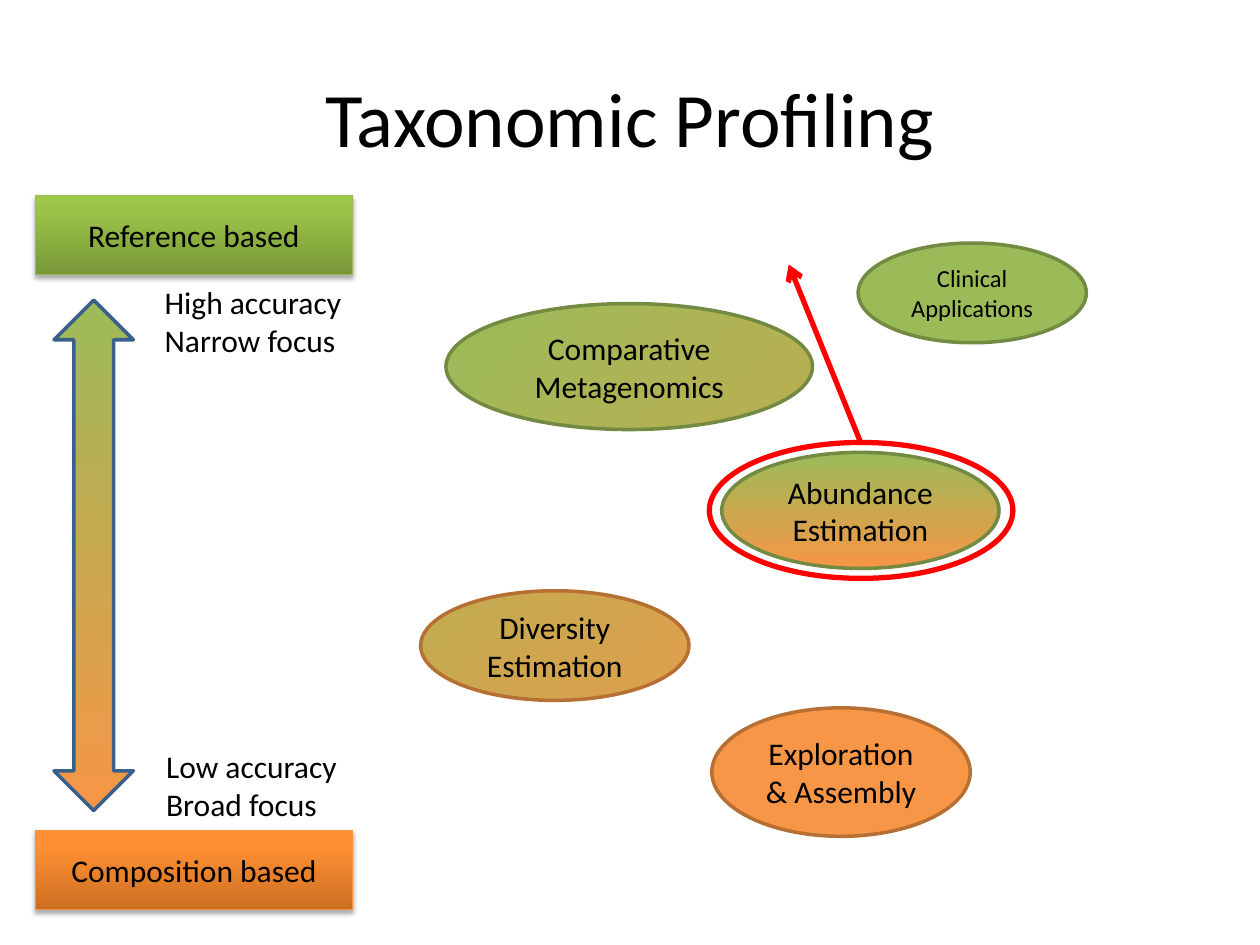
from copy import deepcopy

from lxml.etree import SubElement
from pptx import Presentation
from pptx.dml.color import RGBColor
from pptx.enum.shapes import MSO_CONNECTOR, MSO_SHAPE
from pptx.enum.text import MSO_ANCHOR, PP_ALIGN
from pptx.oxml.ns import qn
from pptx.util import Cm, Pt

FONT = "Calibri"
BLACK, RED = "000000", "FF0000"
GREEN, ORANGE = "9BBB59", "F79646"
GREEN_EDGE, ORANGE_EDGE, BLUE_EDGE = "738A42", "B76F34", "3A5F8C"
TITLE_ONLY = 5


def color(value):
    return RGBColor.from_string(value)


class SlideBuilder:
    """Holds the text style and the slide being filled."""

    def __init__(self, slide):
        self.slide = slide

    def set_text(self, text_frame, text, size, align):
        text_frame.text = text
        for paragraph in text_frame.paragraphs:
            paragraph.alignment = align
            for run in paragraph.runs:
                run.font.name = FONT
                run.font.size = Pt(size)
                run.font.color.rgb = color(BLACK)

    def title(self, text, left, top, width, height):
        title = self.slide.shapes.title
        title.left, title.top = Cm(left), Cm(top)
        title.width, title.height = Cm(width), Cm(height)
        title.text_frame.vertical_anchor = MSO_ANCHOR.MIDDLE
        self.set_text(title.text_frame, text, 44, PP_ALIGN.CENTER)

    def label(self, text, left, top, width, height):
        box = self.slide.shapes.add_textbox(Cm(left), Cm(top), Cm(width), Cm(height))
        box.text_frame.word_wrap = False
        self.set_text(box.text_frame, text, 18, PP_ALIGN.LEFT)

    def shape(self, kind, bounds, edge, weight=2, fill=None, angle=90, text="", size=18):
        """Fill is None, one colour, or a list of (position, colour) stops."""
        shape = self.slide.shapes.add_shape(kind, *map(Cm, bounds))
        shape.shadow.inherit = False
        if fill is None:
            shape.fill.background()
        elif isinstance(fill, str):
            shape.fill.solid()
            shape.fill.fore_color.rgb = color(fill)
        else:
            self.gradient(shape, fill, angle)
        shape.line.color.rgb = color(edge)
        shape.line.width = Pt(weight)
        if text:
            shape.text_frame.vertical_anchor = MSO_ANCHOR.MIDDLE
            self.set_text(shape.text_frame, text, size, PP_ALIGN.CENTER)
        return shape

    def gradient(self, shape, stops, angle):
        """Apply a linear gradient; the angle runs clockwise."""
        shape.fill.gradient()
        shape.fill.gradient_angle = (360 - angle) % 360
        stop_list = shape._element.spPr.find(".//" + qn("a:gsLst"))
        while len(stop_list) < len(stops):
            stop_list.append(deepcopy(stop_list[-1]))
        for stop, (position, value) in zip(shape.fill.gradient_stops, stops):
            stop.position = position
            stop.color.rgb = color(value)

    def banner(self, text, top, edge, fill):
        bounds = (0.71, top, 6.4, 1.6)
        shape = self.shape(MSO_SHAPE.RECTANGLE, bounds, edge, 0.75, fill, 270, text)
        effects = shape._element.spPr.find(qn("a:effectLst"))
        shadow = SubElement(effects, qn("a:outerShdw"), blurRad=str(Pt(3.1)),
                            dist=str(Pt(1.8)), dir="5400000", rotWithShape="0")
        shade = SubElement(shadow, qn("a:srgbClr"), val=BLACK)
        SubElement(shade, qn("a:alpha"), val="35000")

    def arrow(self, start, end, edge, weight):
        ends = map(Cm, (*start, *end))
        connector = self.slide.shapes.add_connector(MSO_CONNECTOR.STRAIGHT, *ends)
        connector.line.color.rgb = color(edge)
        connector.line.width = Pt(weight)
        properties = connector._element.spPr
        SubElement(properties.find(qn("a:ln")), qn("a:tailEnd"), type="arrow")
        SubElement(properties, qn("a:effectLst"))


def main():
    presentation = Presentation()
    presentation.slide_width, presentation.slide_height = Cm(25.4), Cm(19.05)
    layout = presentation.slide_layouts[TITLE_ONLY]
    builder = SlideBuilder(presentation.slides.add_slide(layout))

    builder.title("Taxonomic Profiling", 1.27, 0.76, 22.86, 3.18)

    # Scale from reference based to composition based
    builder.banner("Reference based", 3.94, "98B955",
                   [(0, "779737"), (0.8, "9BC348"), (1, "9DC746")])
    builder.banner("Composition based", 16.74, "F69240",
                   [(0, "CC6E20"), (0.8, "FF9034"), (1, "FF9136")])
    green_to_orange = [(0, GREEN), (1, ORANGE)]
    builder.shape(MSO_SHAPE.UP_DOWN_ARROW, (1.09, 6.05, 1.6, 10.29), BLUE_EDGE,
                  fill=green_to_orange)
    builder.label("High accuracy\nNarrow focus", 3.07, 5.59, 4.11, 1.8)
    builder.label("Low accuracy\nBroad focus", 3.1, 14.94, 4.11, 1.8)

    # Applications, coloured by their place on the scale
    applications = [
        ("Diversity Estimation", (8.48, 11.91, 5.41, 2.21), ORANGE_EDGE,
         [(0, "C0AC52"), (1, "E09F4B")], 45, 18),
        ("Exploration\n& Assembly", (14.35, 14.27, 5.21, 2.59), ORANGE_EDGE,
         ORANGE, 0, 18),
        ("Comparative Metagenomics", (8.99, 6.12, 7.39, 2.54), GREEN_EDGE,
         [(0, GREEN), (1, "BBAE52")], 45, 18),
        ("Abundance\nEstimation", (14.55, 9.12, 5.59, 2.34), GREEN_EDGE,
         green_to_orange, 90, 18),
        ("Clinical Applications", (17.3, 4.9, 4.6, 2.01), GREEN_EDGE,
         GREEN, 0, 14),
    ]
    for text, bounds, edge, fill, angle, size in applications:
        builder.shape(MSO_SHAPE.OVAL, bounds, edge, fill=fill, angle=angle,
                      text=text, size=size)

    # Highlight
    builder.shape(MSO_SHAPE.OVAL, (14.3, 8.92, 6.12, 2.74), RED, 3)
    builder.arrow((17.35, 8.92), (15.9, 5.33), RED, 3)

    presentation.save("out.pptx")


if __name__ == "__main__":
    main()
